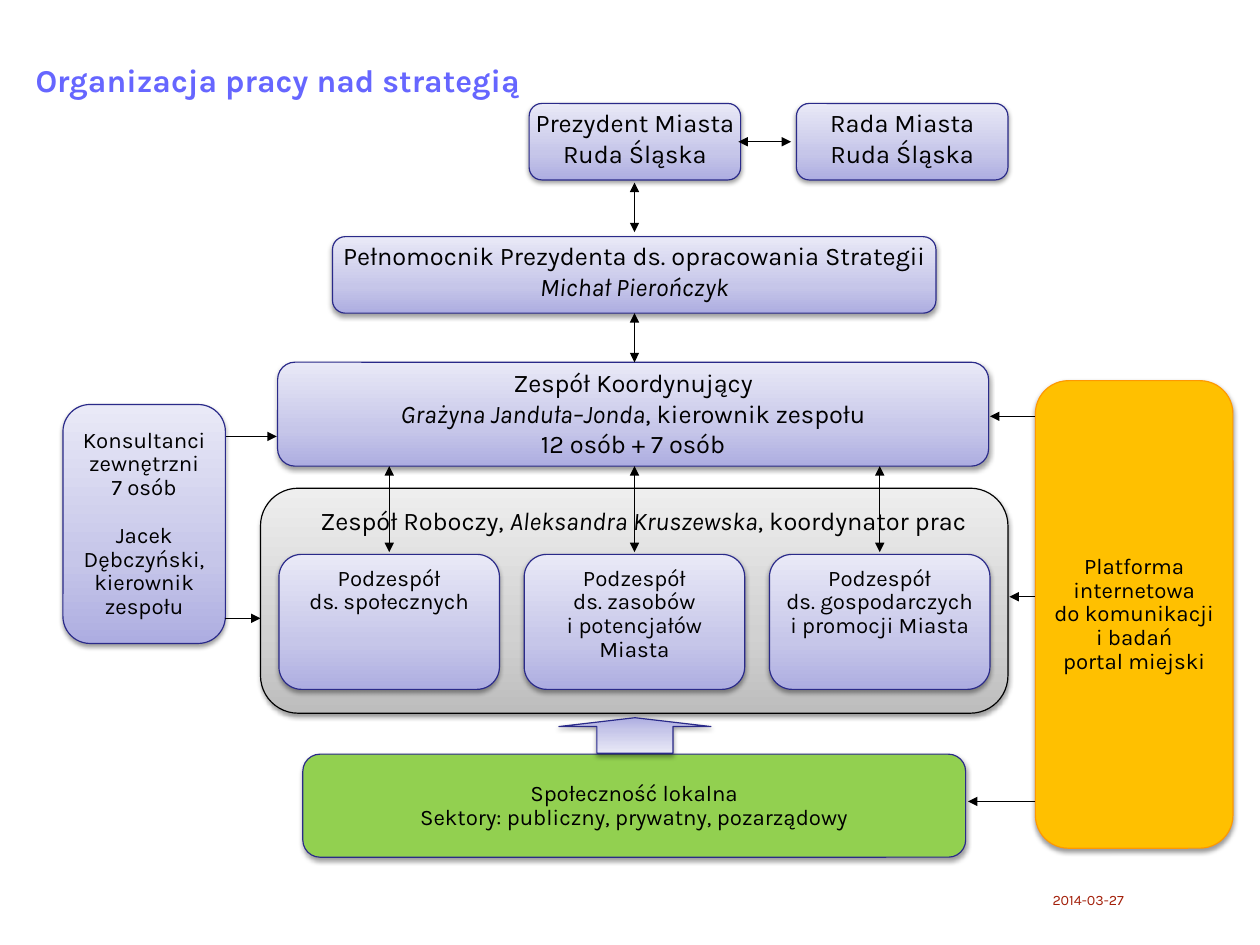
import dataclasses

import lxml.etree
import pptx
import pptx.dml.color
import pptx.enum.shapes
import pptx.enum.text
import pptx.oxml.ns
import pptx.util

Cm = pptx.util.Cm
Pt = pptx.util.Pt
qn = pptx.oxml.ns.qn
Shape = pptx.enum.shapes.MSO_SHAPE
Anchor = pptx.enum.text.MSO_ANCHOR
Align = pptx.enum.text.PP_ALIGN


@dataclasses.dataclass(frozen=True)
class Theme:
    font: str = "Karla"
    ink: str = "000000"
    title: str = "6666FF"
    date: str = "A31F09"
    navy: str = "2A2A89"
    orange: str = "FF9900"
    amber: str = "FFC000"
    green: str = "92D050"
    lilac: tuple = ("ADADE1", "C6C6E9", "E9E9F7")
    grey: tuple = ("BDBDBD", "D1D1D1", "EEEEEE")
    title_size: int = 20
    team_size: int = 16
    group_size: int = 14
    date_size: int = 9
    line_width: float = 0.75


def rgb(value):
    return pptx.dml.color.RGBColor.from_string(value)


def write(frame, text, *, font, size, color, bold=False, align=Align.CENTER,
          anchor=Anchor.TOP, insets=(0, 0, 0, 0), spacing=None, gap_before=None):
    frame.word_wrap = True
    frame.vertical_anchor = anchor
    frame.margin_left, frame.margin_top, frame.margin_right, frame.margin_bottom = map(Cm, insets)
    for index, line in enumerate(text.split("\n")):
        paragraph = frame.paragraphs[0] if index == 0 else frame.add_paragraph()
        paragraph.alignment = align
        if spacing:
            paragraph.line_spacing = spacing
        if index == gap_before:
            paragraph.space_before = spacing
        for part, piece in enumerate(line.split("*")):
            if piece:
                run = paragraph.add_run()
                run.text = piece
                run.font.name = font
                run.font.size = Pt(size)
                run.font.color.rgb = rgb(color)
                run.font.bold = bold
                run.font.italic = part % 2 == 1


class Chart:
    def __init__(self, slide, theme):
        self.slide = slide
        self.theme = theme

    def paint(self, shape, fill, line, angle):
        if isinstance(fill, str):
            shape.fill.solid()
            shape.fill.fore_color.rgb = rgb(fill)
        else:
            shape.fill.gradient()
            shape.fill.gradient_angle = angle
            stops = shape._element.spPr.find(qn("a:gradFill")).find(qn("a:gsLst"))
            for stop in list(stops):
                stops.remove(stop)
            for position, color in zip((0, 35000, 100000), fill):
                stop = lxml.etree.SubElement(stops, qn("a:gs"), pos=str(position))
                lxml.etree.SubElement(stop, qn("a:srgbClr"), val=color)
        shape.line.color.rgb = rgb(line)
        shape.line.width = Pt(self.theme.line_width)
        shape.shadow.inherit = False
        effects = shape._element.spPr.find(qn("a:effectLst"))
        shadow = lxml.etree.SubElement(
            effects, qn("a:outerShdw"), blurRad=str(Pt(3.1)), dist=str(Pt(1.6)),
            dir="5400000", rotWithShape="0")
        color = lxml.etree.SubElement(shadow, qn("a:srgbClr"), val=self.theme.ink)
        lxml.etree.SubElement(color, qn("a:alpha"), val="38000")

    def shape(self, kind, place, fill, line, angle=90):
        shape = self.slide.shapes.add_shape(kind, *map(Cm, place))
        self.paint(shape, fill, line, angle)
        return shape

    def box(self, place, text, fill=None, line=None, **style):
        box = self.shape(Shape.ROUNDED_RECTANGLE, place,
                         fill or self.theme.lilac, line or self.theme.navy)
        box.adjustments[0] = 0.167
        write(box.text_frame, text, font=self.theme.font, color=self.theme.ink, **style)

    def team(self, place, text, insets=(0.05, 0, 0.05, 0.13), **style):
        self.box(place, text, size=self.theme.team_size, insets=insets, **style)

    def group(self, place, text, **style):
        self.box(place, text, size=self.theme.group_size, spacing=Pt(15),
                 insets=(0.05, 0.13, 0.05, 0.13), **style)

    def label(self, place, text, **style):
        label = self.slide.shapes.add_textbox(*map(Cm, place))
        write(label.text_frame, text, font=self.theme.font, align=Align.LEFT, **style)

    def arrow(self, start, end, both=False):
        arrow = self.slide.shapes.add_connector(
            pptx.enum.shapes.MSO_CONNECTOR.STRAIGHT, *map(Cm, start + end))
        arrow.line.color.rgb = rgb(self.theme.ink)
        arrow.line.width = Pt(self.theme.line_width)
        for tip in ("a:headEnd", "a:tailEnd") if both else ("a:tailEnd",):
            lxml.etree.SubElement(arrow.line._get_or_add_ln(), qn(tip), type="triangle")
        lxml.etree.SubElement(arrow._element.spPr, qn("a:effectLst"))

    def block_arrow(self, place):
        arrow = self.shape(Shape.UP_ARROW, place, self.theme.lilac, self.theme.navy, angle=270)
        arrow.adjustments[0] = 0.5
        arrow.adjustments[1] = 0.25


def main():
    theme = Theme()
    deck = pptx.Presentation()
    deck.slide_width, deck.slide_height = Cm(28), Cm(21)
    chart = Chart(deck.slides.add_slide(deck.slide_layouts[6]), theme)

    chart.label((0.79, 0.89, 11.4, 1.3), "Organizacja pracy nad strategią",
                size=theme.title_size, color=theme.title, bold=True,
                anchor=Anchor.BOTTOM, spacing=1.3)

    chart.team((5.79, 10.85, 16.61, 5),
               "Zespół Roboczy, *Aleksandra Kruszewska*, koordynator prac",
               fill=theme.grey, line=theme.ink, insets=(0.65, 0.13, 0.25, 0.13))
    chart.team((11.76, 2.3, 4.7, 1.7), "Prezydent Miasta\nRuda Śląska")
    chart.team((17.7, 2.3, 4.7, 1.7), "Rada Miasta\nRuda Śląska")
    chart.team((7.39, 5.26, 13.41, 1.7),
               "Pełnomocnik Prezydenta ds. opracowania Strategii\n*Michał Pierończyk*")
    chart.team((6.17, 8.05, 15.8, 2.31),
               "Zespół Koordynujący\n*Grażyna Janduła–Jonda*, kierownik zespołu\n12 osób + 7 osób")

    chart.group((1.4, 8.99, 3.61, 5.31),
                "Konsultanci\nzewnętrzni\n7 osób\nJacek Dębczyński,\nkierownik zespołu",
                anchor=Anchor.MIDDLE, gap_before=3)
    chart.group((23.01, 8.46, 4.39, 10.39),
                "Platforma internetowa\ndo komunikacji\ni badań\nportal miejski",
                fill=theme.amber, line=theme.orange, anchor=Anchor.MIDDLE)
    chart.group((6.73, 16.76, 14.73, 2.29),
                "Społeczność lokalna\nSektory: publiczny, prywatny, pozarządowy",
                fill=theme.green, anchor=Anchor.MIDDLE)

    subteams = ("ds. społecznych", "ds. zasobów\ni potencjałów Miasta",
                "ds. gospodarczych\ni promocji Miasta")
    for index, scope in enumerate(subteams):
        left = 6.2 + 5.45 * index
        chart.group((left, 12.32, 4.9, 3), "Podzespół\n" + scope)
        chart.arrow((left + 2.45, 12.27), (left + 2.45, 10.36), both=True)

    chart.arrow((16.41, 3.15), (17.58, 3.15), both=True)
    for bottom, top in ((5.16, 4.06), (8.05, 6.96)):
        chart.arrow((14.1, bottom), (14.1, top), both=True)
    for left, right, height in ((5.03, 6.15, 9.7), (5, 5.79, 13.74)):
        chart.arrow((left, height), (right, height))
    for left, height in ((22, 9.25), (22.43, 13.26), (21.51, 17.81)):
        chart.arrow((23.01, height), (left, height))
    chart.block_arrow((12.42, 15.95, 3.38, 0.79))

    chart.label((23.39, 19.71, 2.18, 0.58), "2014-03-27",
                size=theme.date_size, color=theme.date, anchor=Anchor.MIDDLE)
    deck.save("out.pptx")


if __name__ == "__main__":
    main()
